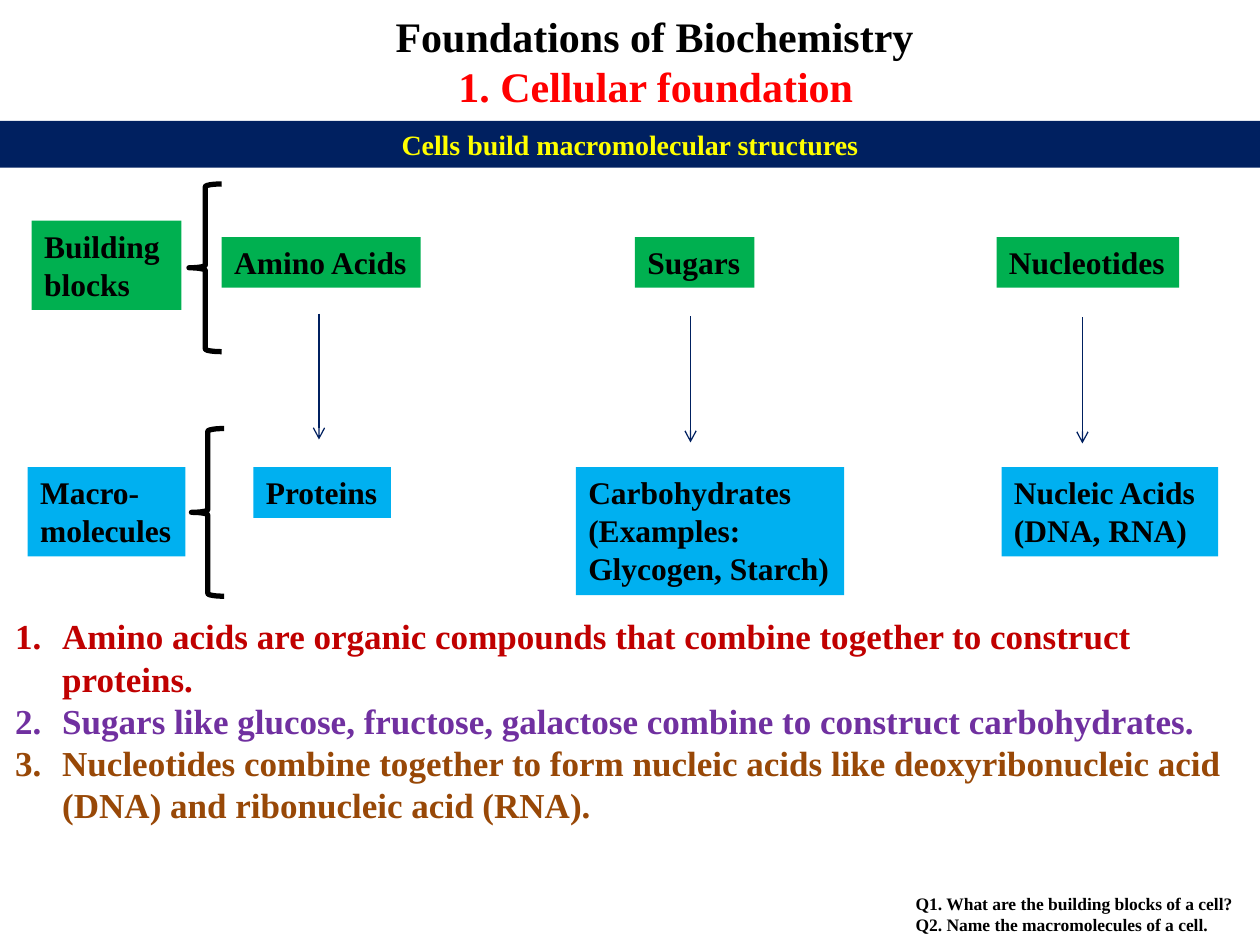
from lxml import etree
from pptx import Presentation, util as u
from pptx.dml.color import RGBColor
from pptx.enum import shapes as kinds, text as t
from pptx.oxml.ns import qn

HUES = {
    "black": "000000", "red": "FF0000", "navy": "002060", "yellow": "FFFF00",
    "green": "00B050", "blue": "00B0F0", "crimson": "C00000",
    "purple": "7030A0", "brown": "984807",
}
LEFT, MID = t.PP_ALIGN.LEFT, t.PP_ALIGN.CENTER
ROW_TOP = {"green": 4.78, "blue": 9.42}


def hue(name):
    return RGBColor.from_string(HUES[name])


def place(shape, left, top, width, height):
    shape.left, shape.top = u.Cm(left), u.Cm(top)
    shape.width, shape.height = u.Cm(width), u.Cm(height)


def write(shape, lines, size=18, hues=("black",), aligns=(LEFT,), wrap=True,
          fit=t.MSO_AUTO_SIZE.NONE):
    """Fill a shape with paragraphs; hues and aligns repeat over the lines."""
    frame = shape.text_frame
    frame.word_wrap, frame.auto_size = wrap, fit
    frame.vertical_anchor = t.MSO_ANCHOR.TOP
    for i, line in enumerate(lines):
        para = frame.paragraphs[0] if i == 0 else frame.add_paragraph()
        para.alignment = aligns[i % len(aligns)]
        para.space_before = u.Pt(0)
        run = para.add_run()
        run.text = line
        font = run.font
        font.name, font.size, font.bold = "Times New Roman", u.Pt(size), True
        font.color.rgb = hue(hues[i % len(hues)])


def number(shape, indent):
    """Number the paragraphs with a hanging indent."""
    for para in shape.text_frame.paragraphs:
        props = para._p.get_or_add_pPr()
        props.set("marL", str(u.Cm(indent)))
        props.set("indent", str(-u.Cm(indent)))
        etree.SubElement(props, qn("a:buFontTx"))
        etree.SubElement(props, qn("a:buAutoNum"), type="arabicPeriod")


def block(slide, fill, left, top, width, height):
    shape = slide.shapes.add_shape(
        kinds.MSO_SHAPE.RECTANGLE, u.Cm(left), u.Cm(top), u.Cm(width), u.Cm(height))
    shape.shadow.inherit = False
    shape.fill.solid()
    shape.fill.fore_color.rgb = hue(fill)
    shape.line.fill.background()
    return shape


def label(slide, fill, left, top, width, *lines):
    """Add a filled box as tall as its lines."""
    box = block(slide, fill, left, top, width, 1.02 + 0.78 * (len(lines) - 1))
    write(box, lines, wrap=False, fit=t.MSO_AUTO_SIZE.SHAPE_TO_FIT_TEXT)


def arrow(slide, left, top, length=2.54):
    line = slide.shapes.add_connector(
        kinds.MSO_CONNECTOR.STRAIGHT, u.Cm(left), u.Cm(top), u.Cm(left), u.Cm(top + length))
    line.line.color.rgb = hue("navy")
    line.line.width = u.Pt(0.75)
    etree.SubElement(line.line._get_or_add_ln(), qn("a:tailEnd"), type="arrow")
    etree.SubElement(line._element.spPr, qn("a:effectLst"))


def brace(slide, left, top):
    shape = slide.shapes.add_shape(
        kinds.MSO_SHAPE.LEFT_BRACE, u.Cm(left), u.Cm(top), u.Cm(0.66), u.Cm(3.38))
    shape.shadow.inherit = False
    shape.fill.background()
    shape.line.color.rgb = hue("black")
    shape.line.width = u.Pt(3)


def main():
    deck = Presentation()
    deck.slide_width, deck.slide_height = u.Cm(25.4), u.Cm(19.05)
    slide = deck.slides.add_slide(deck.slide_layouts[1])
    title, facts = slide.placeholders

    place(title, 7.72, 0.08, 11, 2.31)
    write(title, ["Foundations of Biochemistry", "1. Cellular foundation"],
          size=24, hues=("black", "red"), aligns=(LEFT, MID))

    place(facts, 0.05, 12.27, 25.3, 4.52)
    write(facts, [
        "Amino acids are organic compounds that combine together to construct proteins.",
        "Sugars like glucose, fructose, galactose combine to construct carbohydrates.",
        "Nucleotides combine together to form nucleic acids like deoxyribonucleic acid "
        "(DNA) and ribonucleic acid (RNA).",
    ], size=20, hues=("crimson", "purple", "brown"))
    number(facts, 0.95)

    banner = block(slide, "navy", 0, 2.44, 25.4, 0.94)
    write(banner, ["Cells build macromolecular structures"],
          size=16, hues=("yellow",), aligns=(MID,))

    for fill, left, width, *lines in [
        ("green", 4.47, 4.01, "Amino Acids"),
        ("green", 12.8, 2.41, "Sugars"),
        ("green", 20.09, 3.68, "Nucleotides"),
        ("blue", 5.11, 2.77, "Proteins"),
        ("blue", 11.61, 5.41, "Carbohydrates", "(Examples:", "Glycogen, Starch)"),
        ("blue", 20.19, 4.37, "Nucleic Acids", "(DNA, RNA)"),
    ]:
        label(slide, fill, left, ROW_TOP[fill], width, *lines)
    for left, top in [(6.43, 6.32), (13.92, 6.38), (21.82, 6.4)]:
        arrow(slide, left, top)

    label(slide, "green", 0.64, 4.45, 3.02, "Building", "blocks")
    brace(slide, 3.81, 3.71)
    label(slide, "blue", 0.56, ROW_TOP["blue"], 3.18, "Macro-", "molecules")
    brace(slide, 3.86, 8.64)

    quiz = slide.shapes.add_textbox(u.Cm(18.21), u.Cm(17.88), u.Cm(7.06), u.Cm(1.12))
    write(quiz, ["Q1. What are the building blocks of a cell?",
                 "Q2. Name the macromolecules of a cell."], size=10)

    deck.save("out.pptx")


if __name__ == "__main__":
    main()
